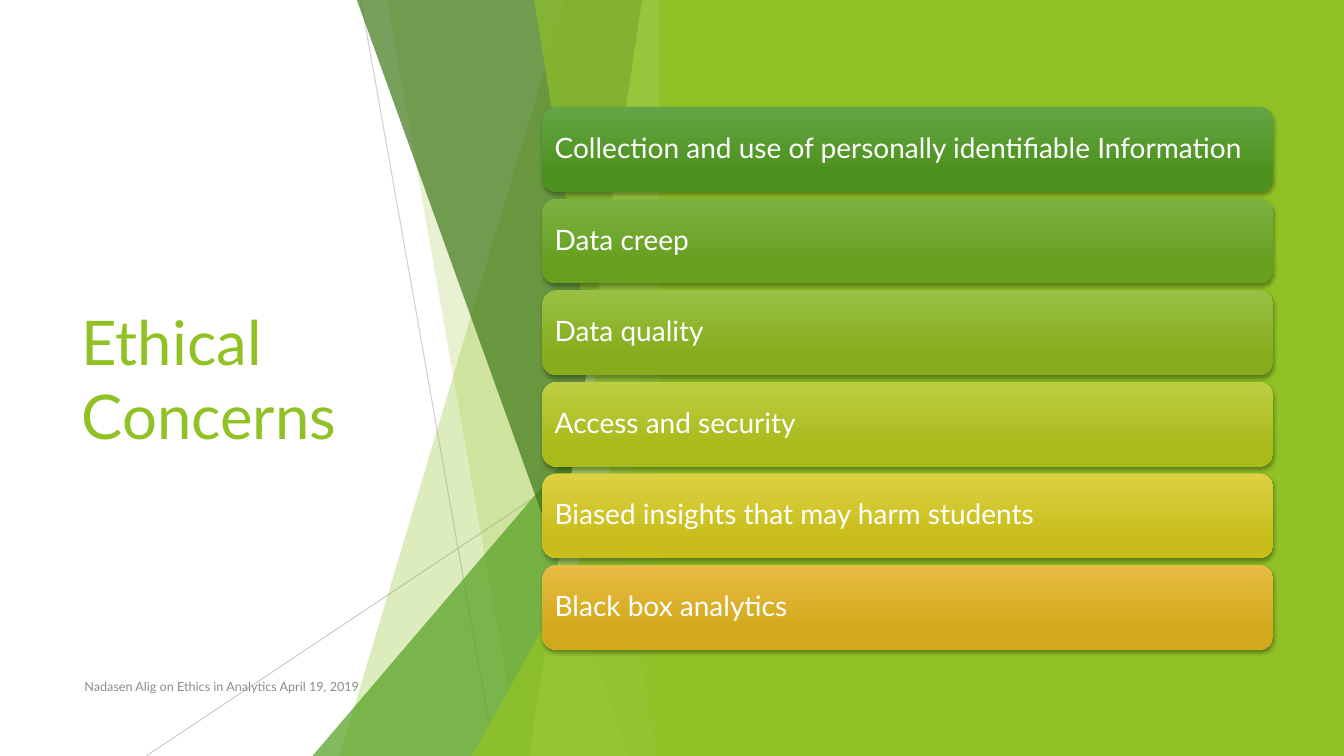
from dataclasses import dataclass

import pptx
import pptx.dml.color
import pptx.enum.shapes
import pptx.enum.text
import pptx.oxml.ns
import pptx.util
from lxml import etree

Pt = pptx.util.Pt
qn = pptx.oxml.ns.qn
Preset = pptx.enum.shapes.MSO_SHAPE

SLIDE_WIDTH, SLIDE_HEIGHT = 960, 540
FACET_RIGHT = 479.5
FONT = "Lato"
LIME = "90C226"
WHITE = "FFFFFF"
CONCERN_LEFT, CONCERN_TOP = 387.4, 76.5
CONCERN_WIDTH, CONCERN_HEIGHT, CONCERN_PITCH = 522, 60.6, 65.4


@dataclass(frozen=True)
class Ray:
    start: tuple[float, float]
    end: tuple[float, float]
    opacity: int


@dataclass(frozen=True)
class Facet:
    top_x: float
    bottom_x: float
    color: str
    opacity: int


@dataclass(frozen=True)
class Peak:
    left: float
    top: float
    color: str
    opacity: int


@dataclass(frozen=True)
class Concern:
    text: str
    light: str
    deep: str


RAYS = [
    Ray((257.8, 0), (353.5, SLIDE_HEIGHT), 75),
    Ray((FACET_RIGHT, 290.2), (104.4, SLIDE_HEIGHT), 80),
]

BACKDROP = [
    Facet(404, 242.6, LIME, 30),
    Facet(276.5, 371.5, LIME, 20),
    Peak(223.2, 239.8, "54A021", 72),
    Facet(254.9, 449.3, "3F7819", 70),
    Facet(458.6, 378, "C0E474", 70),
    Facet(381.6, 468.7, LIME, 65),
    Peak(337, 283, LIME, 80),
]

CONCERNS = [
    Concern("Collection and use of personally identifiable Information", "63A545", "4D921E"),
    Concern("Data creep", "7BB244", "679F1E"),
    Concern("Data quality", "99C044", "86AC1D"),
    Concern("Access and security", "BDCE43", "A9BA1B"),
    Concern("Biased insights that may harm students", "DCD143", "C8BD1A"),
    Concern("Black box analytics", "E7BC43", "D2A91B"),
]


def rgb(value: str) -> pptx.dml.color.RGBColor:
    return pptx.dml.color.RGBColor.from_string(value)


def set_opacity(shape, percent: int) -> None:
    for color in shape._element.spPr.iter(qn("a:srgbClr")):
        etree.SubElement(color, qn("a:alpha"), val=str(percent * 1000))


def write(shape, text: str, *, size: float, color: str, inset: float = 7.2,
          spacing: float = 1.0) -> None:
    frame = shape.text_frame
    frame.word_wrap = True
    frame.auto_size = pptx.enum.text.MSO_AUTO_SIZE.NONE
    frame.vertical_anchor = pptx.enum.text.MSO_ANCHOR.MIDDLE
    frame.margin_left = frame.margin_right = Pt(inset)
    paragraph = frame.paragraphs[0]
    paragraph.alignment = pptx.enum.text.PP_ALIGN.LEFT
    paragraph.line_spacing = spacing
    run = paragraph.add_run()
    run.text = text
    run.font.name = FONT
    run.font.size = Pt(size)
    run.font.color.rgb = rgb(color)


def paint(shape, color: str, opacity: int = 100) -> None:
    shape.shadow.inherit = False
    shape.line.fill.background()
    shape.fill.solid()
    shape.fill.fore_color.rgb = rgb(color)
    if opacity < 100:
        set_opacity(shape, opacity)


def draw_ray(shapes, ray: Ray) -> None:
    line = shapes.add_connector(
        pptx.enum.shapes.MSO_CONNECTOR.STRAIGHT, *map(Pt, ray.start + ray.end))
    line.line.width = Pt(0.75)
    line.line.color.rgb = rgb("BFBFBF")
    set_opacity(line, ray.opacity)
    etree.SubElement(line._element.spPr, qn("a:effectLst"))


def draw_facet(shapes, facet: Facet) -> None:
    outline = shapes.build_freeform(Pt(facet.top_x), 0)
    outline.add_line_segments([
        (Pt(FACET_RIGHT), 0),
        (Pt(FACET_RIGHT), Pt(SLIDE_HEIGHT)),
        (Pt(facet.bottom_x), Pt(SLIDE_HEIGHT)),
    ])
    paint(outline.convert_to_shape(), facet.color, facet.opacity)


def draw_peak(shapes, peak: Peak) -> None:
    triangle = shapes.add_shape(
        Preset.ISOSCELES_TRIANGLE, Pt(peak.left), Pt(peak.top),
        Pt(FACET_RIGHT - peak.left), Pt(SLIDE_HEIGHT - peak.top))
    triangle.adjustments[0] = 1
    paint(triangle, peak.color, peak.opacity)


def draw_concern(shapes, concern: Concern, top: float) -> None:
    card = shapes.add_shape(
        Preset.ROUNDED_RECTANGLE, Pt(CONCERN_LEFT), Pt(top),
        Pt(CONCERN_WIDTH), Pt(CONCERN_HEIGHT))
    card.line.fill.background()
    card.fill.gradient()
    card.fill.gradient_angle = 270
    stops = zip(card.fill.gradient_stops, (concern.light, concern.deep), (0, 0.78))
    for stop, color, position in stops:
        stop.color.rgb = rgb(color)
        stop.position = position
    card.shadow.inherit = False
    effects = card._element.spPr.find(qn("a:effectLst"))
    shadow = etree.SubElement(
        effects, qn("a:outerShdw"), blurRad=str(Pt(3)), dist=str(Pt(2)),
        dir="5400000", rotWithShape="0")
    tint = etree.SubElement(shadow, qn("a:srgbClr"), val="000000")
    etree.SubElement(tint, qn("a:alpha"), val="35000")
    write(card, concern.text, size=20, color=WHITE, inset=5.8, spacing=0.9)


def main() -> None:
    deck = pptx.Presentation()
    deck.slide_width, deck.slide_height = Pt(SLIDE_WIDTH), Pt(SLIDE_HEIGHT)
    slide = deck.slides.add_slide(deck.slide_layouts.get_by_name("Title Only"))
    shapes = slide.shapes

    title = shapes.title
    title.left, title.top, title.width, title.height = map(Pt, (51.1, 108.7, 279.4, 322.6))
    write(title, "Ethical Concerns", size=44, color=LIME)

    for ray in RAYS:
        draw_ray(shapes, ray)
    for piece in BACKDROP:
        if isinstance(piece, Facet):
            draw_facet(shapes, piece)
        else:
            draw_peak(shapes, piece)

    panel_left = 470.6
    panel = shapes.add_shape(
        Preset.RECTANGLE, Pt(panel_left), 0,
        Pt(SLIDE_WIDTH - panel_left), Pt(SLIDE_HEIGHT))
    paint(panel, LIME)

    for row, concern in enumerate(CONCERNS):
        draw_concern(shapes, concern, CONCERN_TOP + row * CONCERN_PITCH)

    credit = shapes.add_textbox(*map(Pt, (53.3, 475.9, 496, 28.8)))
    write(credit, "Nadasen Alig on Ethics in Analytics April 19, 2019", size=9, color="8C8C8C")

    deck.save("out.pptx")


if __name__ == "__main__":
    main()
